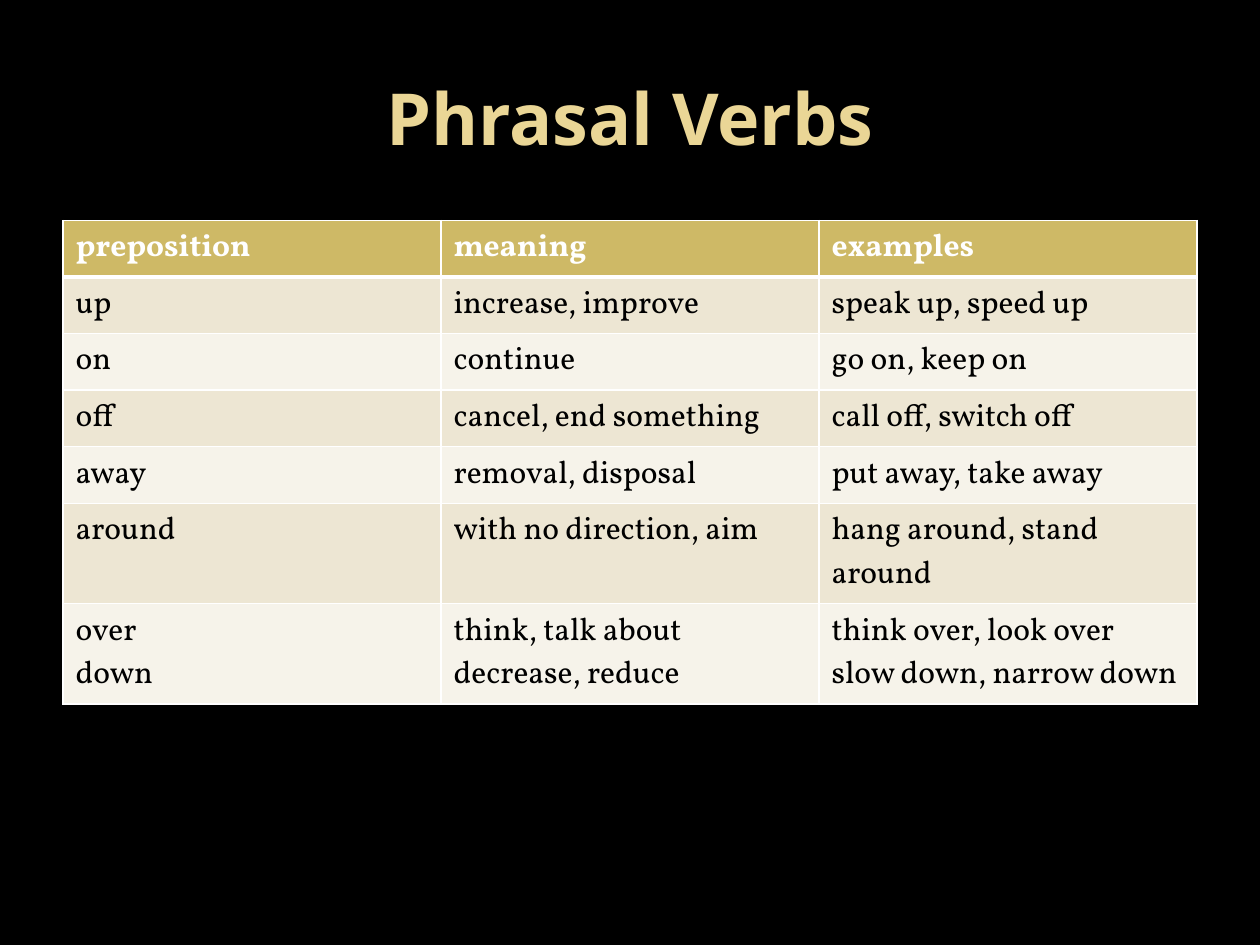
from lxml.etree import SubElement
from pptx import Presentation
from pptx.dml.color import RGBColor
from pptx.enum.text import MSO_ANCHOR, PP_ALIGN
from pptx.oxml.ns import qn
from pptx.util import Pt


def paint(fill, color):
    fill.solid()
    fill.fore_color.rgb = RGBColor.from_string(color)


def write(para, text, font, size, color, bold):
    run = para.add_run()
    run.text = text
    run.font.name = font
    run.font.size = Pt(size)
    run.font.bold = bold
    paint(run.font.fill, color)


deck = Presentation()
deck.slide_width, deck.slide_height = Pt(720), Pt(540)
slide = deck.slides.add_slide(deck.slide_layouts[5])
paint(slide.background.fill, "000000")

title = slide.shapes.title
title.left, title.top = Pt(36), Pt(21.6)
title.width, title.height = Pt(648), Pt(90)
frame = title.text_frame
frame.vertical_anchor = MSO_ANCHOR.MIDDLE
frame.paragraphs[0].alignment = PP_ALIGN.CENTER
write(frame.paragraphs[0], "Phrasal Verbs", "Open Sans", 41, "EAD696", True)

rows = [
    ["preposition", "meaning", "examples"],
    ["up", "increase, improve", "speak up, speed up"],
    ["on", "continue", "go on, keep on"],
    ["off", "cancel, end something", "call off, switch off"],
    ["away", "removal, disposal", "put away, take away"],
    ["around", "with no direction, aim", "hang around, stand around"],
    ["over\ndown", "think, talk about\ndecrease, reduce",
     "think over, look over\nslow down, narrow down"],
]
table = slide.shapes.add_table(
    len(rows), 3, Pt(36), Pt(126), Pt(648), Pt(29.2 * len(rows))).table

for r, row in enumerate(rows):
    head = r == 0
    shade = "CEB966" if head else ("F6F3EA", "EDE6D3")[r % 2]
    ink = "FFFFFF" if head else "000000"
    for c, text in enumerate(row):
        cell = table.cell(r, c)
        props = cell._tc.get_or_add_tcPr()
        widths = {"L": 1, "R": 1, "T": 3 if r == 1 else 1, "B": 3 if head else 1}
        for side, width in widths.items():
            line = SubElement(props, qn(f"a:ln{side}"), w=str(Pt(width)))
            solid = SubElement(line, qn("a:solidFill"))
            SubElement(solid, qn("a:srgbClr"), val="FFFFFF")
        paint(cell.fill, shade)
        frame = cell.text_frame
        for i, part in enumerate(text.split("\n")):
            para = frame.add_paragraph() if i else frame.paragraphs[0]
            write(para, part, "Vollkorn", 18, ink, head)

deck.save("out.pptx")
